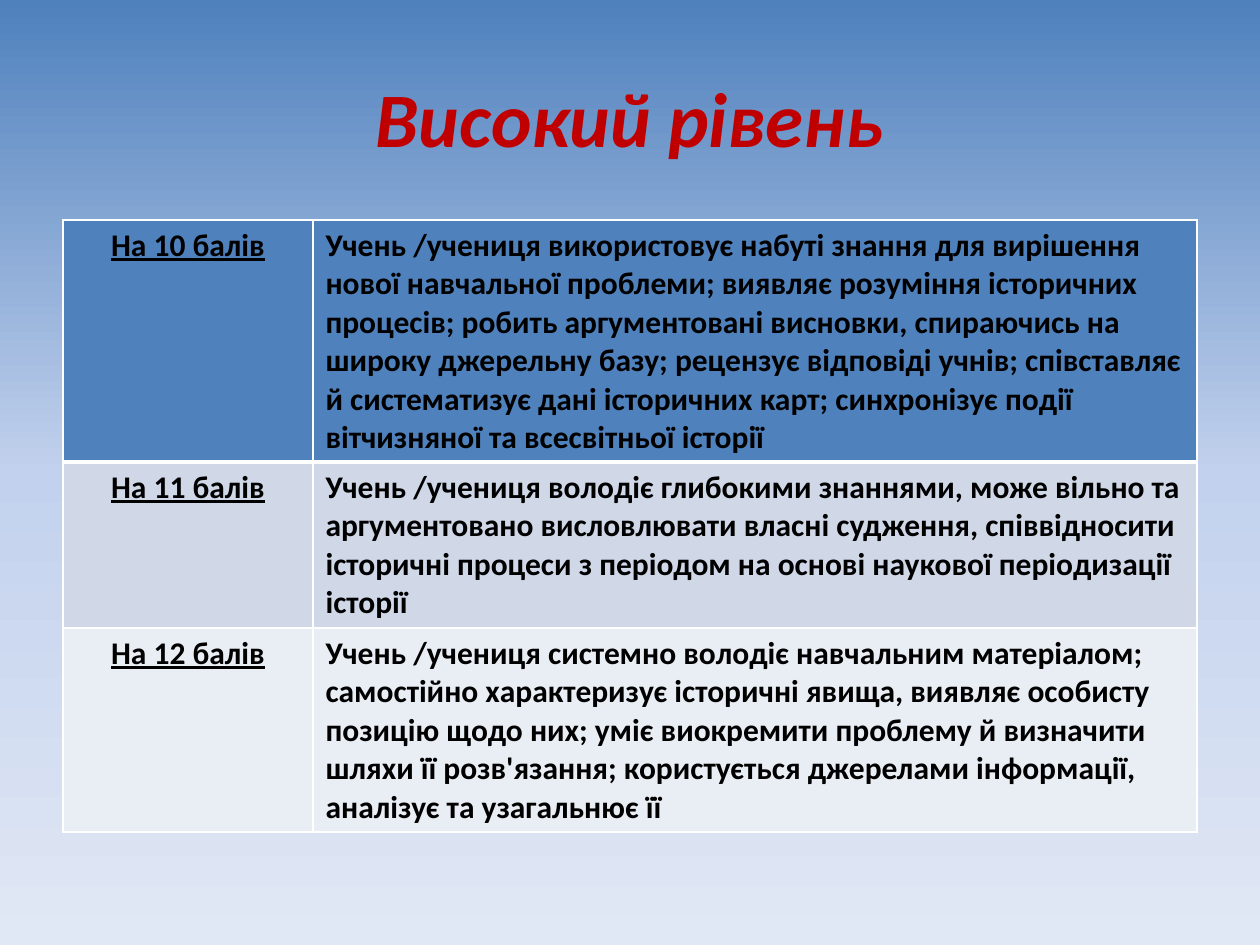
from copy import deepcopy
from typing import NamedTuple

from lxml import etree
from pptx import Presentation
from pptx import util as u
from pptx.dml.color import RGBColor
from pptx.enum import text
from pptx.oxml import ns

PX = 914400 / 126

COLORS = {
    "title": "C00000",
    "body": "000000",
    "border": "FFFFFF",
    "sky_top": "4F81BD",
    "sky_middle": "C2D1ED",
    "sky_bottom": "E1E8F5",
    "row_10": "4F81BD",
    "row_11": "D0D8E8",
    "row_12": "E9EDF4",
}


class Level(NamedTuple):
    score: str
    criteria: str
    fill: str
    height: int
    top_border: int
    bottom_border: int


LEVELS = [
    Level("На 10 балів",
          "Учень /учениця використовує набуті знання для вирішення нової навчальної "
          "проблеми; виявляє розуміння історичних процесів; робить аргументовані "
          "висновки, спираючись на широку джерельну базу; рецензує відповіді учнів; "
          "співставляє й систематизує дані історичних карт; синхронізує події "
          "вітчизняної та всесвітньої історії",
          "row_10", 242, 1, 3),
    Level("На 11 балів",
          "Учень /учениця володіє глибокими знаннями, може вільно та аргументовано "
          "висловлювати власні судження, співвідносити історичні процеси з періодом "
          "на основі наукової періодизації історії",
          "row_11", 166, 3, 1),
    Level("На 12 балів",
          "Учень /учениця системно володіє навчальним матеріалом; самостійно "
          "характеризує історичні явища, виявляє особисту позицію щодо них; уміє "
          "виокремити проблему й визначити шляхи її розв'язання; користується "
          "джерелами інформації, аналізує та узагальнює її",
          "row_12", 204, 1, 1),
]
COLUMN_WIDTHS = (250, 884)


def px(length: int) -> u.Emu:
    return u.Emu(round(length * PX))


def rgb(name: str) -> RGBColor:
    return RGBColor.from_string(COLORS[name])


def write(frame, wording: str, *, size: int = 18, color: str = "body",
          italic: bool = False, underline: bool = False,
          align=text.PP_ALIGN.LEFT) -> None:
    paragraph = frame.paragraphs[0]
    paragraph.alignment = align
    run = paragraph.add_run()
    run.text = wording
    font = run.font
    font.name, font.size, font.bold = "Calibri", u.Pt(size), True
    font.italic, font.underline = italic, underline
    font.color.rgb = rgb(color)


def paint_background(slide) -> None:
    fill = slide.background.fill
    fill.gradient()
    fill.gradient_angle = 270
    stop_list = slide.element.find(".//" + ns.qn("a:gsLst"))
    stop_list.append(deepcopy(stop_list[0]))
    sky = zip(fill.gradient_stops, (0, 0.5, 1),
              ("sky_top", "sky_middle", "sky_bottom"))
    for stop, position, color in sky:
        stop.position = position
        stop.color.rgb = rgb(color)


def add_borders(cell, top: int, bottom: int) -> None:
    properties = cell._tc.get_or_add_tcPr()
    sides = {"a:lnL": 1, "a:lnR": 1, "a:lnT": top, "a:lnB": bottom}
    # Border lines come before the cell fill
    for index, (tag, points) in enumerate(sides.items()):
        line = etree.Element(ns.qn(tag), w=str(u.Pt(points)))
        solid = etree.SubElement(line, ns.qn("a:solidFill"))
        etree.SubElement(solid, ns.qn("a:srgbClr"), val=COLORS["border"])
        properties.insert(index, line)


def add_level(table, row: int, level: Level) -> None:
    table.rows[row].height = px(level.height)
    score, criteria = table.cell(row, 0), table.cell(row, 1)
    write(score.text_frame, level.score, underline=True,
          align=text.PP_ALIGN.CENTER)
    write(criteria.text_frame, level.criteria)
    for cell in (score, criteria):
        cell.fill.solid()
        cell.fill.fore_color.rgb = rgb(level.fill)
        add_borders(cell, level.top_border, level.bottom_border)


def main() -> None:
    deck = Presentation()
    deck.slide_width, deck.slide_height = px(1260), px(945)
    slide = deck.slides.add_slide(deck.slide_layouts[6])
    paint_background(slide)

    # Title
    title = slide.shapes.add_textbox(px(63), px(38), px(1134), px(157)).text_frame
    title.word_wrap = True
    title.vertical_anchor = text.MSO_ANCHOR.MIDDLE
    write(title, "Високий рівень", size=44, color="title", italic=True,
          align=text.PP_ALIGN.CENTER)

    # Table of levels
    table = slide.shapes.add_table(
        len(LEVELS), len(COLUMN_WIDTHS), px(63), px(220),
        px(sum(COLUMN_WIDTHS)), px(sum(level.height for level in LEVELS))).table
    for column, width in zip(table.columns, COLUMN_WIDTHS):
        column.width = px(width)
    for row, level in enumerate(LEVELS):
        add_level(table, row, level)

    deck.save("out.pptx")


if __name__ == "__main__":
    main()
